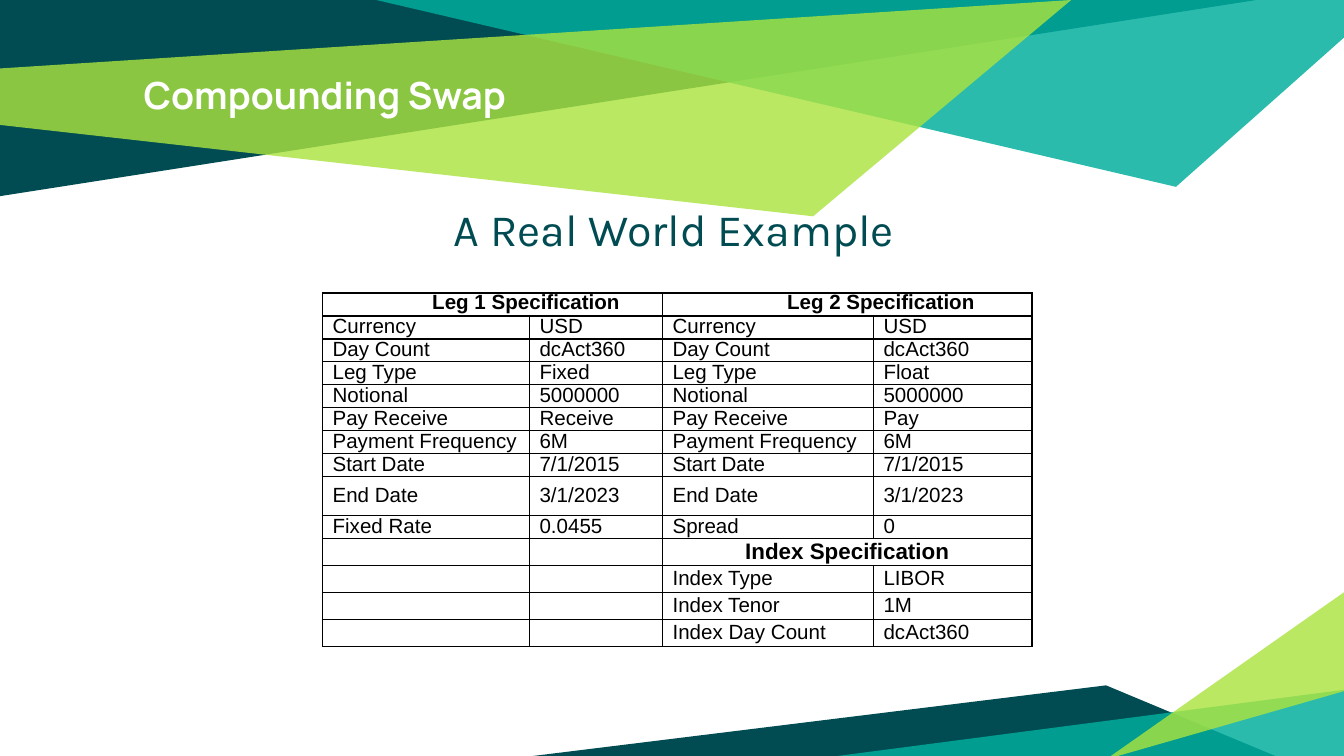
from lxml import etree
from pptx import Presentation
from pptx.dml.color import RGBColor
from pptx.enum.text import MSO_ANCHOR as ANCHOR, PP_ALIGN as ALIGN
from pptx.oxml.ns import qn
from pptx.util import Inches, Pt

COLORS = {"navy": "004C52", "teal": "00AE9D", "lime": "ABE33F",
          "white": "FFFFFF", "black": "000000"}

# colour, opacity in percent, corner points
RIBBONS = [
    ("navy", 100, [(0, 0), (0, 1.46), (9.35, 0)]),
    ("teal", 83, [(2.8, 0), (8.75, 1.39), (10, 0.28), (10, 0)]),
    ("lime", 81, [(-0.01, 0.51), (0, 0.93), (6.05, 1.61), (7.97, 0)]),
    ("navy", 100, [(3.93, 5.63), (9.5, 5.63), (8.23, 5.1)]),
    ("teal", 83, [(10.02, 5.13), (10.02, 5.65), (6.04, 5.65)]),
    ("lime", 81, [(10.01, 5.14), (10.01, 4.4), (8.23, 5.65)]),
]

TITLE = "Compounding Swap"
SUBTITLE = "A Real World Example"

LEG_HEADERS = ["Leg 1 Specification", "", "Leg 2 Specification", ""]
LEG_ROWS = [
    ["Currency", "USD", "Currency", "USD"],
    ["Day Count", "dcAct360", "Day Count", "dcAct360"],
    ["Leg Type", "Fixed", "Leg Type", "Float"],
    ["Notional", "5000000", "Notional", "5000000"],
    ["Pay Receive", "Receive", "Pay Receive", "Pay"],
    ["Payment Frequency", "6M", "Payment Frequency", "6M"],
    ["Start Date", "7/1/2015", "Start Date", "7/1/2015"],
    ["End Date", "3/1/2023", "End Date", "3/1/2023"],
    ["Fixed Rate", "0.0455", "Spread", "0"],
]
INDEX_HEADER = ["", "", "Index Specification", ""]
INDEX_ROWS = [
    ["", "", "Index Type", "LIBOR"],
    ["", "", "Index Tenor", "1M"],
    ["", "", "Index Day Count", "dcAct360"],
]
ROWS = [LEG_HEADERS, *LEG_ROWS, INDEX_HEADER, *INDEX_ROWS]
INDEX_AT = ROWS.index(INDEX_HEADER)
TALL_AT = 8
COL_WIDTHS = [1.54, 0.99, 1.57, 1.18]
ROW_HEIGHT, TALL_HEIGHT = 0.17, 0.29


def rgb(name):
    return RGBColor.from_string(COLORS[name])


def write(tf, text, *, font="Arial", size=11, color="black", bold=False,
          align=ALIGN.LEFT, before=0, indent=0, spacing=None):
    p = tf.paragraphs[0]
    p.alignment = align
    p.space_before = Pt(before)
    p.line_spacing = spacing
    if indent:
        p._p.get_or_add_pPr().set("marL", str(Inches(indent)))
    if not text:  # keeps an empty cell as low as its row
        etree.SubElement(p._p, qn("a:endParaRPr"), sz=str(size * 100))
        return
    r = p.add_run()
    r.text = text
    r.font.name, r.font.size, r.font.bold = font, Pt(size), bold
    r.font.color.rgb = rgb(color)


def add_text(s, box, text, **fmt):
    tf = s.shapes.add_textbox(*map(Inches, box)).text_frame
    tf.word_wrap = True
    tf.margin_left = tf.margin_right = tf.margin_top = tf.margin_bottom = Inches(0.1)
    write(tf, text, **fmt)


def add_ribbon(s, color, opacity, points):
    start, *rest = [(Inches(x), Inches(y)) for x, y in points]
    builder = s.shapes.build_freeform(*start)
    builder.add_line_segments(rest, close=True)
    sp = builder.convert_to_shape()
    sp.shadow.inherit = False
    sp.line.fill.background()
    sp.fill.solid()
    sp.fill.fore_color.rgb = rgb(color)
    if opacity < 100:
        clr = sp._element.spPr.find(".//" + qn("a:srgbClr"))
        etree.SubElement(clr, qn("a:alpha"), val=str(opacity * 1000))


def add_borders(cell, color="black", width=0.75):
    tcPr = cell._tc.get_or_add_tcPr()
    for i, side in enumerate(("lnL", "lnR", "lnT", "lnB")):
        ln = etree.Element(qn("a:" + side), w=str(Pt(width)))
        fill = etree.SubElement(ln, qn("a:solidFill"))
        etree.SubElement(fill, qn("a:srgbClr"), val=COLORS[color])
        tcPr.insert(i, ln)


def cell_format(row, text):
    if row == 0:
        return dict(bold=True, align=ALIGN.CENTER, indent=0.5)
    if row == INDEX_AT and text:
        return dict(bold=True, align=ALIGN.CENTER, size=12)
    return {} if text else dict(size=12)


def add_swap_table(s, left, top):
    heights = [TALL_HEIGHT if i == TALL_AT else ROW_HEIGHT for i in range(len(ROWS))]
    table = s.shapes.add_table(
        len(ROWS), len(COL_WIDTHS), Inches(left), Inches(top),
        Inches(sum(COL_WIDTHS)), Inches(sum(heights))).table
    table.first_row = table.horz_banding = False
    for col, width in zip(table.columns, COL_WIDTHS):
        col.width = Inches(width)
    for i, (texts, height) in enumerate(zip(ROWS, heights)):
        table.rows[i].height = Inches(height)
        for j, text in enumerate(texts):
            cell = table.cell(i, j)
            cell.margin_left = cell.margin_right = Pt(5.4)
            cell.margin_top = cell.margin_bottom = 0
            cell.vertical_anchor = ANCHOR.TOP if i == 0 else ANCHOR.MIDDLE
            cell.fill.background()
            add_borders(cell)
            write(cell.text_frame, text, spacing=0.93, **cell_format(i, text))
    for row, col in [(0, 0), (0, 2), (INDEX_AT, 2)]:
        table.cell(row, col).merge(table.cell(row, col + 1))


def main():
    prs = Presentation()
    prs.slide_width = Inches(10)
    prs.slide_height = prs.slide_width * 9 // 16
    s = prs.slides.add_slide(prs.slide_layouts[6])
    for ribbon in RIBBONS:
        add_ribbon(s, *ribbon)
    add_text(s, (0.97, 0.44, 8.06, 0.64), TITLE,
             font="Manrope", size=20, color="white", bold=True)
    add_text(s, (0.75, 1.4, 8.45, 4.09), SUBTITLE, font="Karla", size=24,
             color="navy", align=ALIGN.CENTER, before=6, indent=0.08)
    add_swap_table(s, 2.4, 2.18)
    prs.save("out.pptx")


if __name__ == "__main__":
    main()
